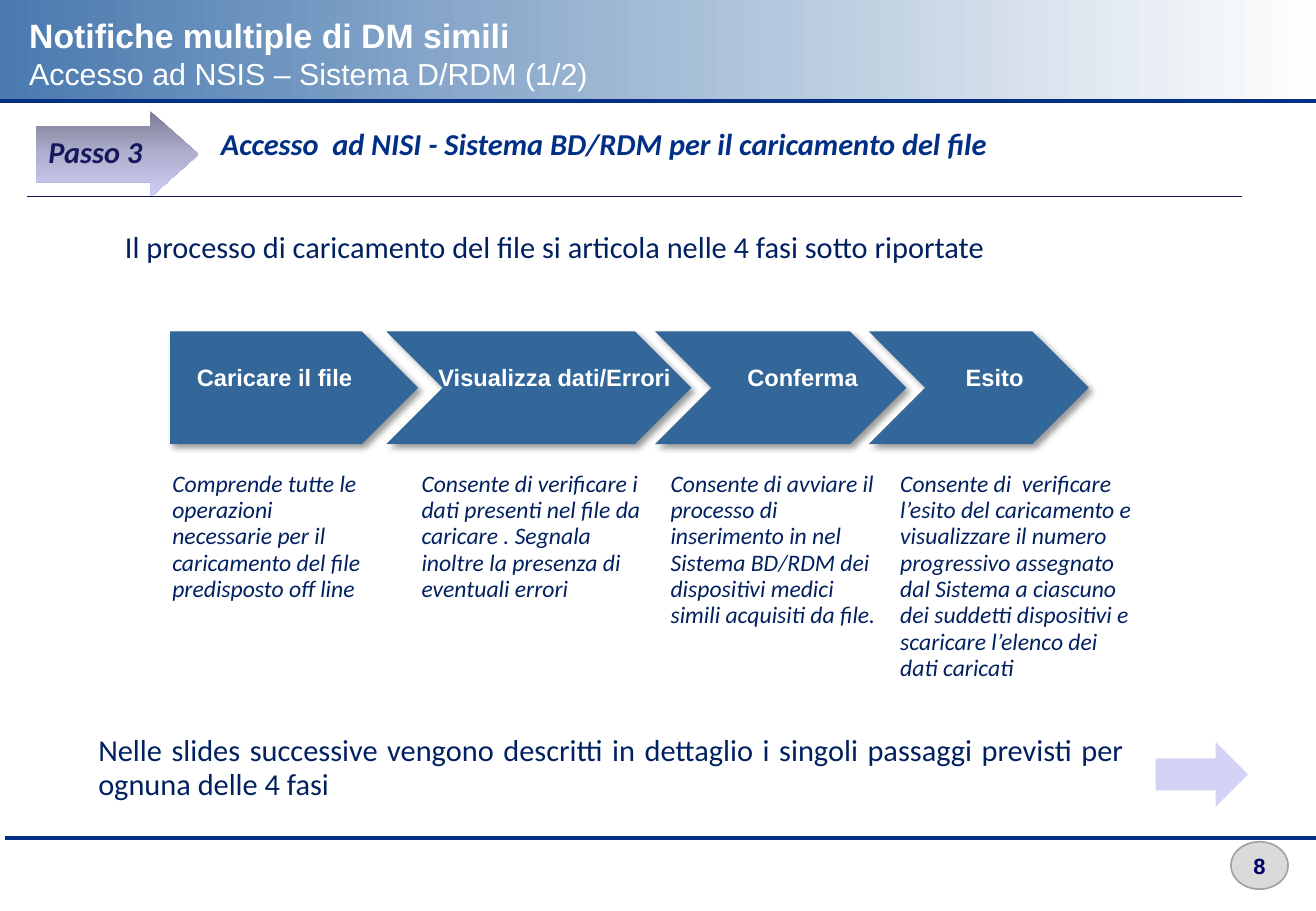
"""Build the slide on loading a file in four phases."""
import copy
import dataclasses
import pptx
import pptx.util
import pptx.dml.color
import pptx.enum.shapes
import pptx.enum.text
import pptx.oxml.ns
import lxml.etree

Pt = pptx.util.Pt
Kind = pptx.enum.shapes.MSO_SHAPE
Align = pptx.enum.text.PP_ALIGN
Anchor = pptx.enum.text.MSO_ANCHOR
qn = pptx.oxml.ns.qn


@dataclasses.dataclass(frozen=True)
class Theme:
    """Hold the colours, fonts and type sizes."""
    band: tuple = ("4A7AAF", "FEFEFE")
    step: tuple = ("7B7B92", "AFAFD0", "CFCFF7")
    rule: str = "002F86"
    ink: str = "17175C"
    body: str = "002060"
    phase: str = "336699"
    next: str = "D2D2F4"
    badge: str = "DADADA"
    edge: str = "A3A3A3"
    page: str = "000066"
    white: str = "FFFFFF"
    shade: str = "000000"
    head: str = "Arial"
    text: str = "Calibri"
    title: int = 20
    large: int = 18
    small: int = 14
    num: int = 13
    tight: float = 0.93


THEME = Theme()
PHASES = (
    (12.93, 18.84, 12.93, 15.88, 12.19, 17.45, "Caricare il file",
     "Comprende tutte le operazioni necessarie per il caricamento del file "
     "predisposto off line"),
    (29.36, 23.18, 32.04, 20.22, 31.12, 18.93, "Visualizza dati/Errori",
     "Consente di verificare i dati presenti nel file da caricare . Segnala "
     "inoltre la presenza di eventuali errori"),
    (49.77, 19.11, 50.88, 20.22, 50.05, 17.45, "Conferma",
     "Consente di avviare il processo di inserimento in nel Sistema BD/RDM "
     "dei dispositivi medici simili acquisiti da file."),
    (66.02, 16.71, 65.47, 20.22, 67.5, 19.58, "Esito",
     "Consente di  verificare l’esito del caricamento e visualizzare il "
     "numero progressivo assegnato dal Sistema a ciascuno dei suddetti "
     "dispositivi e scaricare l’elenco dei dati caricati"),
)


def rgb(code):
    """Turn a hex code into a colour."""
    return pptx.dml.color.RGBColor.from_string(code)


def part(box, x, y, w, h):
    """Return the area at percent shares of a box."""
    left, top, wide, high = box
    return (int(left + wide * x / 100), int(top + high * y / 100),
            int(wide * w / 100), int(high * h / 100))


def style(para, size, color, face=THEME.text, bold=False, italic=False,
          align=Align.LEFT):
    """Format one paragraph."""
    para.alignment = align
    font = para.font
    font.size, font.name = Pt(size), face
    font.bold, font.italic = bold, italic
    font.color.rgb = rgb(color)


def label(slide, area, words, size, color, **look):
    """Add a wrapped text box."""
    frame = slide.shapes.add_textbox(*area).text_frame
    frame.word_wrap = True
    para = frame.paragraphs[0]
    para.text = words
    para.line_spacing = THEME.tight
    style(para, size, color, **look)


def shape(slide, kind, area, color=None):
    """Add a flat shape without an outline."""
    item = slide.shapes.add_shape(kind, *area)
    item.shadow.inherit = False
    item.line.fill.background()
    if color:
        item.fill.solid()
        item.fill.fore_color.rgb = rgb(color)
    return item


def blend(item, colors, angle):
    """Fill a shape with evenly spaced gradient stops."""
    fill = item.fill
    fill.gradient()
    fill.gradient_angle = angle
    stops = item.element.spPr.find(".//" + qn("a:gsLst"))
    while len(stops) < len(colors):
        stops.append(copy.deepcopy(stops[0]))
    for i, stop in enumerate(fill.gradient_stops):
        stop.position = i / (len(colors) - 1)
        stop.color.rgb = rgb(colors[i])


def shade(item):
    """Add a soft shadow down and to the right."""
    effects = item.element.spPr.find(qn("a:effectLst"))
    outer = lxml.etree.SubElement(
        effects, qn("a:outerShdw"), blurRad=str(Pt(4)), dist=str(Pt(3)),
        dir="2700000", algn="tl", rotWithShape="0")
    color = lxml.etree.SubElement(outer, qn("a:srgbClr"), val=THEME.shade)
    lxml.etree.SubElement(color, qn("a:alpha"), val="40000")


def rule(slide, area, color, width):
    """Draw a line along the top of an area."""
    x, y, w, _ = area
    line = slide.shapes.add_connector(
        pptx.enum.shapes.MSO_CONNECTOR.STRAIGHT, x, y, x + w, y)
    line.line.color.rgb = rgb(color)
    line.line.width = Pt(width)
    lxml.etree.SubElement(line.element.spPr, qn("a:effectLst"))


def header(slide, box):
    """Place the title over its band."""
    band = shape(slide, Kind.RECTANGLE, part(box, 0, 0, 100, 100))
    blend(band, THEME.band, 0)
    title = slide.shapes.title
    title.element.addprevious(band.element)
    title.left, title.top, title.width, title.height = part(
        box, 1.29, 25.3, 76.73, 55.4)
    frame = title.text_frame
    frame.text = ("Notifiche multiple di DM simili\n"
                  "Accesso ad NSIS – Sistema D/RDM (1/2)")
    frame.auto_size = pptx.enum.text.MSO_AUTO_SIZE.NONE
    frame.vertical_anchor = Anchor.MIDDLE
    first, second = frame.paragraphs
    style(first, THEME.title, THEME.white, THEME.head, bold=True)
    style(second, THEME.large, THEME.white, THEME.head)
    rule(slide, part(box, 0, 100, 100, 0), THEME.rule, 2.25)


def step(slide, box):
    """Place the step arrow and its heading."""
    label(slide, part(box, 15.88, 21.7, 77.1, 49.4),
          "Accesso  ad NISI - Sistema BD/RDM per il caricamento del file",
          THEME.large, THEME.rule, bold=True, italic=True)
    arrow = shape(slide, Kind.RIGHT_ARROW, part(box, 2.72, 10.2, 12.37, 85.5))
    arrow.adjustments[0] = 0.65
    arrow.adjustments[1] = 0.56
    blend(arrow, THEME.step, 270)
    label(slide, part(box, 2.77, 28.9, 10.9, 45.8), "Passo 3",
          THEME.large, THEME.ink, bold=True, italic=True)
    rule(slide, part(box, 2.03, 95, 92.34, 0), THEME.ink, 0.75)


def phases(slide, box):
    """Place the chain of phases with a note under each."""
    label(slide, part(box, 8.59, 1.4, 79.78, 9),
          "Il processo di caricamento del file si articola nelle 4 fasi "
          "sotto riportate", THEME.large, THEME.body, align=Align.JUSTIFY)
    for i, (x, w, *_) in enumerate(PHASES):
        kind = Kind.CHEVRON if i else Kind.PENTAGON
        shade(shape(slide, kind, part(box, x, 22.1, w, 22.1), THEME.phase))
    for _, _, x, w, left, wide, name, note in PHASES:
        label(slide, part(box, x, 27.5, w, 7.6), name, THEME.small,
              THEME.white, face=THEME.head, bold=True, align=Align.CENTER)
        label(slide, part(box, left, 48.3, wide, 49), note, THEME.small,
              THEME.body, italic=True)


def closing(slide, box):
    """Place the closing sentence and the onward arrow."""
    label(slide, part(box, 6.56, 0, 79.78, 88),
          "Nelle slides successive vengono descritti in dettaglio i singoli "
          "passaggi previsti per ognuna delle 4 fasi",
          THEME.large, THEME.body, align=Align.JUSTIFY)
    shape(slide, Kind.RIGHT_ARROW, part(box, 87.81, 14.7, 7.02, 70.7),
          THEME.next)


def footer(slide, box):
    """Place the lower rule and the page badge."""
    rule(slide, part(box, 0.37, 0, 99.63, 0), THEME.rule, 2.25)
    badge = shape(slide, Kind.OVAL, part(box, 93.54, 5, 4.34, 65), THEME.badge)
    badge.line.color.rgb = rgb(THEME.edge)
    badge.line.width = Pt(1)
    frame = badge.text_frame
    frame.margin_left = frame.margin_right = 0
    frame.margin_top = frame.margin_bottom = 0
    frame.vertical_anchor = Anchor.MIDDLE
    frame.text = "8"
    style(frame.paragraphs[0], THEME.num, THEME.page, THEME.head, bold=True,
          align=Align.CENTER)


def main():
    """Stack the regions down the slide and save."""
    deck = pptx.Presentation()
    deck.slide_width = pptx.util.Inches(10.83)
    deck.slide_height = pptx.util.Inches(7.5)
    slide = deck.slides.add_slide(deck.slide_layouts[5])
    page = (0, 0, deck.slide_width, deck.slide_height)
    for draw, top, high in ((header, 0, 11.07), (step, 11.07, 11.07),
                            (phases, 24, 56), (closing, 80, 10),
                            (footer, 92, 8)):
        draw(slide, part(page, 0, top, 100, high))
    deck.save("out.pptx")


if __name__ == "__main__":
    main()
